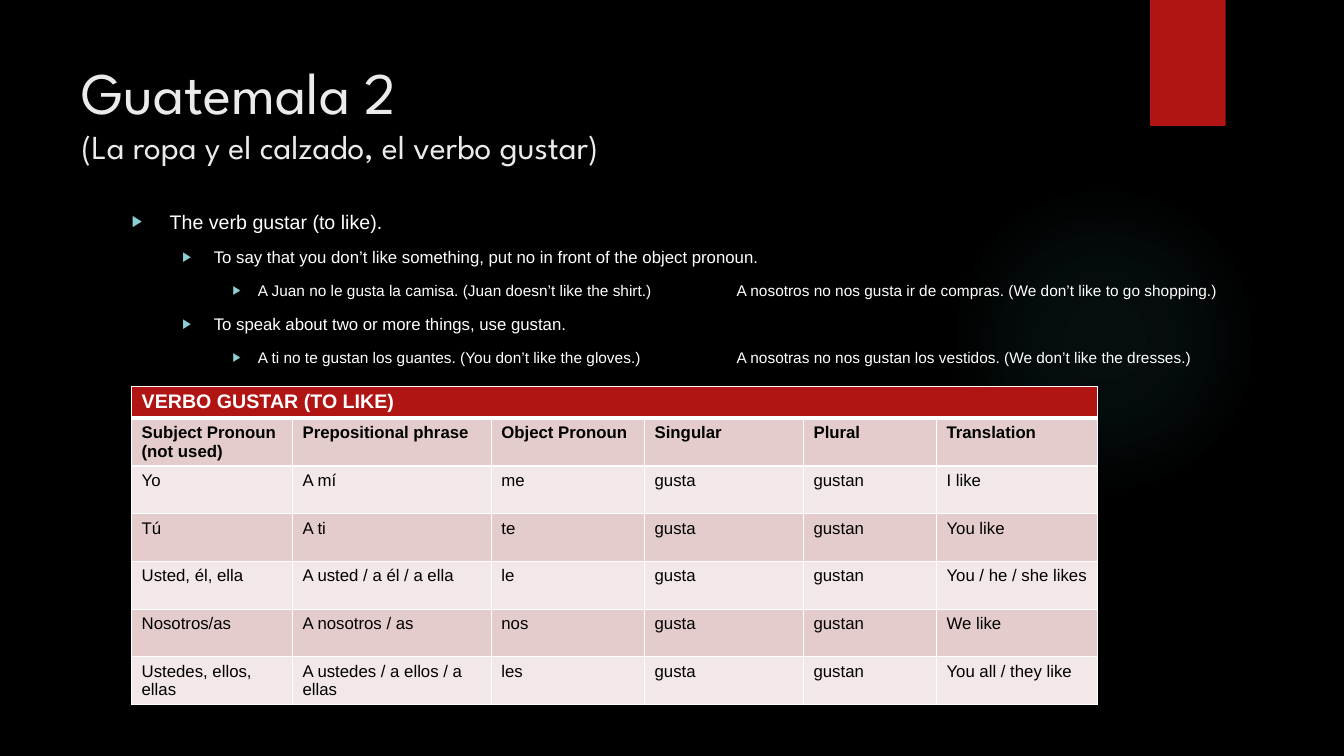
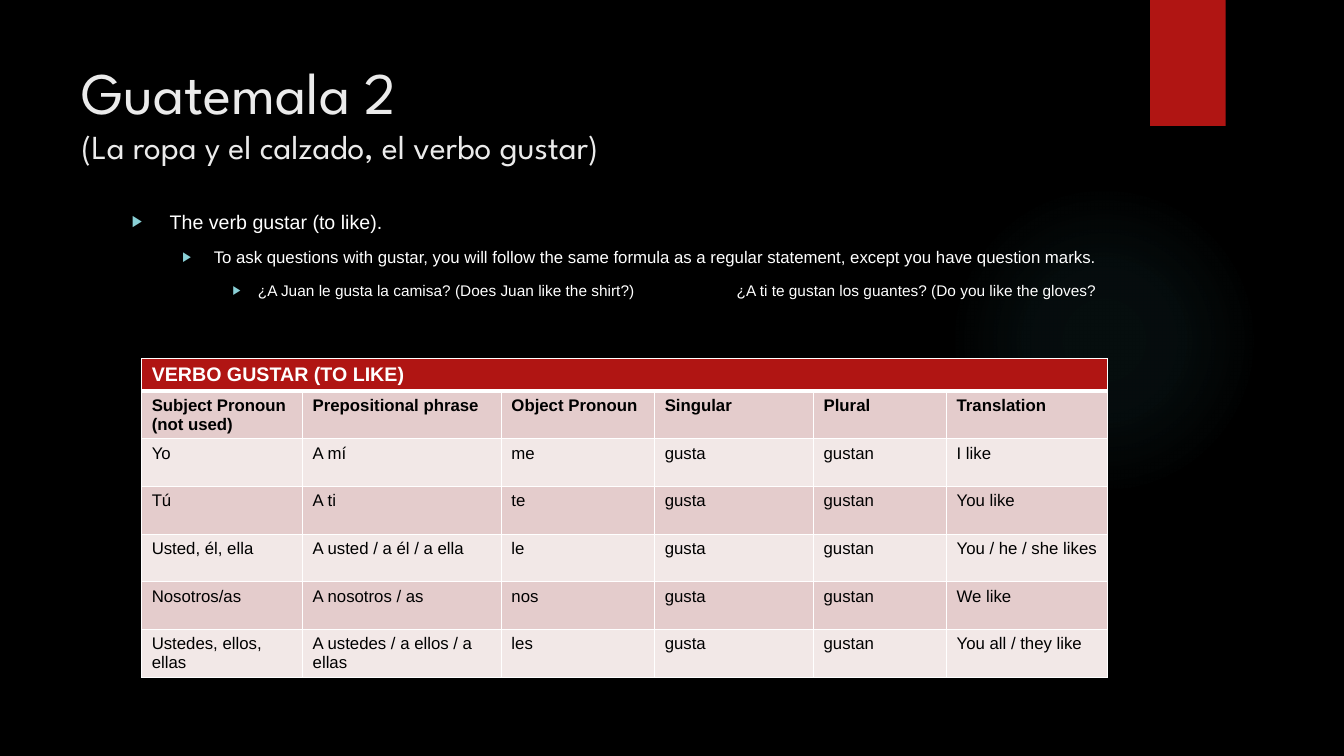
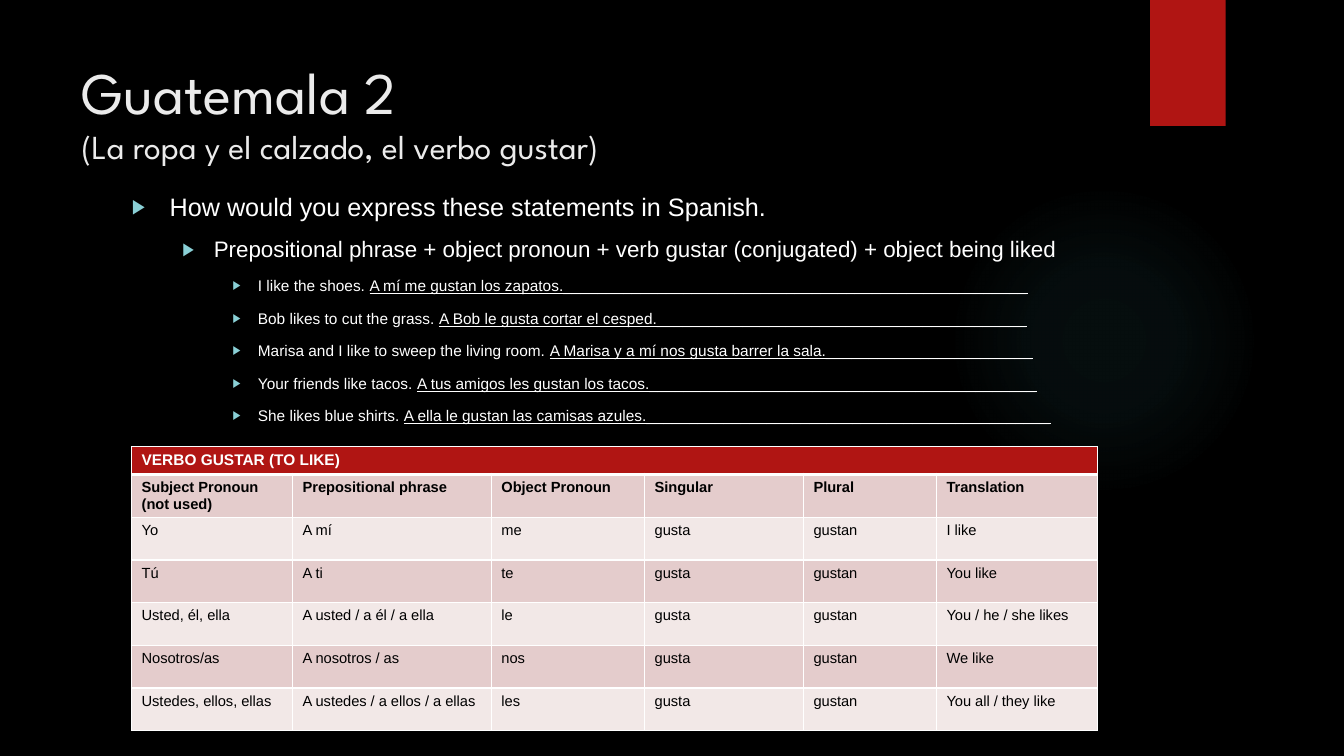
from lxml import etree
from pptx import Presentation
from pptx.dml.color import RGBColor
from pptx.enum.shapes import MSO_SHAPE
from pptx.enum.text import MSO_ANCHOR, MSO_AUTO_SIZE, PP_ALIGN
from pptx.oxml import parse_xml
from pptx.oxml.ns import nsdecls, qn
from pptx.util import Pt

OVAL, RECTANGLE = MSO_SHAPE.OVAL, MSO_SHAPE.RECTANGLE
TOP, NO_FIT, LEFT = MSO_ANCHOR.TOP, MSO_AUTO_SIZE.NONE, PP_ALIGN.LEFT

BLACK = RGBColor(0x00, 0x00, 0x00)
WHITE = RGBColor(0xFF, 0xFF, 0xFF)
TITLE_GREY = RGBColor(0xEB, 0xEB, 0xEB)
RED = RGBColor(0xB0, 0x15, 0x13)
TEAL = RGBColor(0x50, 0xB9, 0xC1)
BULLET_TEAL = RGBColor(0x8A, 0xD0, 0xD6)
DARK_ROSE = RGBColor(0xE4, 0xCC, 0xCC)
LIGHT_ROSE = RGBColor(0xF2, 0xE8, 0xE7)

TITLE_FONT, BODY_FONT = "League Spartan", "Arial"
TITLE_LINES = [("Guatemala 2", 42), ("(La ropa y el calzado, el verbo gustar)", 24)]
GLOW_STOPS = [(0, 7), (36, 6), (69, 0)]
LEVEL_INDENTS = [(27, 27), (58.5, 22.5), (90, 18)]
SECOND_EXAMPLE_TAB = 432

VERB_TITLE = "VERBO GUSTAR (TO LIKE)"
COLUMN_WIDTHS = [115, 142, 109.5, 113.5, 95, 115]
COLUMN_HEADS = ["Subject Pronoun (not used)", "Prepositional phrase",
                "Object Pronoun", "Singular", "Plural", "Translation"]
PRONOUNS = [
    ("Yo", "A mí", "me", "I like"),
    ("Tú", "A ti", "te", "You like"),
    ("Usted, él, ella", "A usted / a él / a ella", "le", "You / he / she likes"),
    ("Nosotros/as", "A nosotros / as", "nos", "We like"),
    ("Ustedes, ellos, ellas", "A ustedes / a ellos / a ellas", "les", "You all / they like"),
]

RULES = [
    (0, 14, "The verb gustar (to like)."),
    (1, 12, "To say that you don’t like something, put no in front of the object pronoun."),
    (2, 11, "A Juan no le gusta la camisa. (Juan doesn’t like the shirt.)\t"
            "A nosotros no nos gusta ir de compras. (We don’t like to go shopping.)"),
    (1, 12, "To speak about two or more things, use gustan."),
    (2, 11, "A ti no te gustan los guantes. (You don’t like the gloves.)\t"
            "A nosotras no nos gustan los vestidos. (We don’t like the dresses.)"),
]
QUESTIONS = [
    (0, 14, "The verb gustar (to like)."),
    (1, 12, "To ask questions with gustar, you will follow the same formula as a regular "
            "statement, except you have question marks."),
    (2, 11, "¿A Juan le gusta la camisa? (Does Juan like the shirt?)\t"
            "¿A ti te gustan los guantes? (Do you like the gloves?"),
]
PRACTICE = [
    (0, 18, "How would you express these statements in Spanish."),
    (1, 16, "Prepositional phrase + object pronoun + verb gustar (conjugated) "
            "+ object being liked"),
    (2, 11, "I like the shoes. ", "A mí me gustan los zapatos." + "_" * 54),
    (2, 11, "Bob likes to cut the grass. ", "A Bob le gusta cortar el cesped." + "_" * 43),
    (2, 11, "Marisa and I like to sweep the living room. ",
     "A Marisa y a mí nos gusta barrer la sala." + "_" * 24),
    (2, 11, "Your friends like tacos. ", "A tus amigos les gustan los tacos." + "_" * 45),
    (2, 11, "She likes blue shirts. ", "A ella le gustan las camisas azules." + "_" * 47),
]


def write(paragraph, text, size, color=WHITE, font=BODY_FONT, bold=False, underline=False):
    """Add one formatted run to a paragraph."""
    run = paragraph.add_run()
    run.text = text
    run.font.name = font
    run.font.size = Pt(size)
    run.font.bold = bold
    run.font.underline = underline
    run.font.color.rgb = color


def place(shape, left, top, width, height):
    """Set the position and size of a shape in points."""
    shape.left, shape.top = Pt(left), Pt(top)
    shape.width, shape.height = Pt(width), Pt(height)


def paragraph_at(frame, index):
    """Return the first paragraph of a frame, or a new one after it."""
    return frame.add_paragraph() if index else frame.paragraphs[0]


def add_decoration(slide, layout, preset, *box):
    """Put a plain red shape behind the placeholders of the layout."""
    decoration = slide.shapes.add_shape(preset, *map(Pt, box))
    decoration.shadow.inherit = False
    decoration.fill.solid()
    decoration.fill.fore_color.rgb = RED
    decoration.line.fill.background()
    layout.shapes.element.insert(2, decoration.element)
    return decoration


def fill_with_glow(shape):
    """Fill a shape with a teal radial gradient that fades out."""
    stops = "".join(
        f'<a:gs pos="{position * 1000}"><a:srgbClr val="{TEAL}">'
        f'<a:alpha val="{opacity * 1000}"/></a:srgbClr></a:gs>'
        for position, opacity in GLOW_STOPS)
    properties = shape.element.spPr
    properties.replace(properties.find(qn("a:solidFill")), parse_xml(
        f'<a:gradFill {nsdecls("a")}><a:gsLst>{stops}</a:gsLst><a:path path="circle">'
        '<a:fillToRect l="50000" t="50000" r="50000" b="50000"/></a:path></a:gradFill>'))


def style_layout(layout, slide):
    """Give the layout its background, decorations and placeholder places."""
    layout.background.fill.solid()
    layout.background.fill.fore_color.rgb = BLACK
    add_decoration(slide, layout, RECTANGLE, 821.5, 0, 54, 90)
    fill_with_glow(add_decoration(slide, layout, OVAL, 677.5, 132, 222, 222))
    title, body = layout.placeholders[0], layout.placeholders[1]
    place(title, 51, 36, 741, 110)
    place(body, 87, 146, 844, 346)


def prepare_frame(placeholder):
    """Start the text at the top of a placeholder, at its full size."""
    frame = placeholder.text_frame
    frame.word_wrap = True
    frame.auto_size = NO_FIT
    frame.vertical_anchor = TOP
    return frame


def add_title(slide):
    """Write the lesson title and its topic."""
    frame = prepare_frame(slide.shapes.title)
    for index, (line, size) in enumerate(TITLE_LINES):
        paragraph = paragraph_at(frame, index)
        paragraph.alignment = LEFT
        write(paragraph, line, size, TITLE_GREY, TITLE_FONT)


def add_bullet(paragraph, level):
    """Give a paragraph its level, indent, arrow bullet and tab stop."""
    margin, hanging = LEVEL_INDENTS[level]
    paragraph.level = level
    properties = paragraph._p.get_or_add_pPr()
    properties.set("marL", str(Pt(margin)))
    properties.set("indent", str(-Pt(hanging)))
    color = etree.SubElement(properties, qn("a:buClr"))
    etree.SubElement(color, qn("a:srgbClr"), val=str(BULLET_TEAL))
    etree.SubElement(properties, qn("a:buSzPct"), val="80000")
    etree.SubElement(properties, qn("a:buFont"), typeface=BODY_FONT)
    etree.SubElement(properties, qn("a:buChar"), char="▶")
    tabs = etree.SubElement(properties, qn("a:tabLst"))
    etree.SubElement(tabs, qn("a:tab"), pos=str(Pt(SECOND_EXAMPLE_TAB)), algn="l")


def add_outline(slide, points):
    """Write the bulleted points, with any answer underlined."""
    frame = prepare_frame(slide.placeholders[1])
    for index, (level, size, statement, *answers) in enumerate(points):
        paragraph = paragraph_at(frame, index)
        add_bullet(paragraph, level)
        paragraph.space_before = Pt(10 if index else 0)
        write(paragraph, statement, size)
        for answer in answers:
            write(paragraph, answer, size, underline=True)


def format_cell(cell, fill, bottom_width=1):
    """Fill a table cell and draw its white borders."""
    properties = cell._tc.get_or_add_tcPr()
    for side, width in (("L", 1), ("R", 1), ("T", 1), ("B", bottom_width)):
        border = etree.SubElement(properties, qn(f"a:ln{side}"), w=str(Pt(width)))
        solid = etree.SubElement(border, qn("a:solidFill"))
        etree.SubElement(solid, qn("a:srgbClr"), val=str(WHITE))
    cell.fill.solid()
    cell.fill.fore_color.rgb = fill


def add_verb_table(slide, left, top, title_size=14, text_size=12,
                   title_height=23, row_height=34.1):
    """Add the table of gustar forms."""
    rows = [COLUMN_HEADS] + [
        (subject, phrase, pronoun, "gusta", "gustan", translation)
        for subject, phrase, pronoun, translation in PRONOUNS]
    table = slide.shapes.add_table(
        len(rows) + 1, len(COLUMN_WIDTHS), Pt(left), Pt(top), Pt(sum(COLUMN_WIDTHS)),
        Pt(title_height + row_height * len(rows))).table
    for column, width in zip(table.columns, COLUMN_WIDTHS):
        column.width = Pt(width)
    for row in table.rows:
        row.height = Pt(row_height)
    table.rows[0].height = Pt(title_height)

    for column in range(len(COLUMN_WIDTHS)):
        format_cell(table.cell(0, column), RED, bottom_width=3)
    heading = table.cell(0, 0)
    heading.merge(table.cell(0, len(COLUMN_WIDTHS) - 1))
    write(heading.text_frame.paragraphs[0], VERB_TITLE, title_size, bold=True)
    for row_number, texts in enumerate(rows, 1):
        for column, text in enumerate(texts):
            cell = table.cell(row_number, column)
            format_cell(cell, DARK_ROSE if row_number % 2 else LIGHT_ROSE)
            write(cell.text_frame.paragraphs[0], text, text_size, BLACK,
                  bold=row_number == 1)


def add_lesson_slide(deck, layout, points):
    """Add a slide with the lesson title and its points."""
    slide = deck.slides.add_slide(layout)
    add_title(slide)
    add_outline(slide, points)
    return slide


def main():
    """Build the three gustar slides."""
    deck = Presentation()
    deck.slide_width, deck.slide_height = Pt(960), Pt(540)
    layout = deck.slide_layouts[1]

    rules = add_lesson_slide(deck, layout, RULES)
    style_layout(layout, rules)
    add_verb_table(rules, 94, 275.8)

    questions = add_lesson_slide(deck, layout, QUESTIONS)
    add_verb_table(questions, 101.2, 256.3)

    practice = add_lesson_slide(deck, layout, PRACTICE)
    place(practice.placeholders[1], 87, 133, 704, 346)
    add_verb_table(practice, 94, 319, title_size=11, text_size=10.5,
                   title_height=20, row_height=30.5)

    deck.save("out.pptx")


if __name__ == "__main__":
    main()
